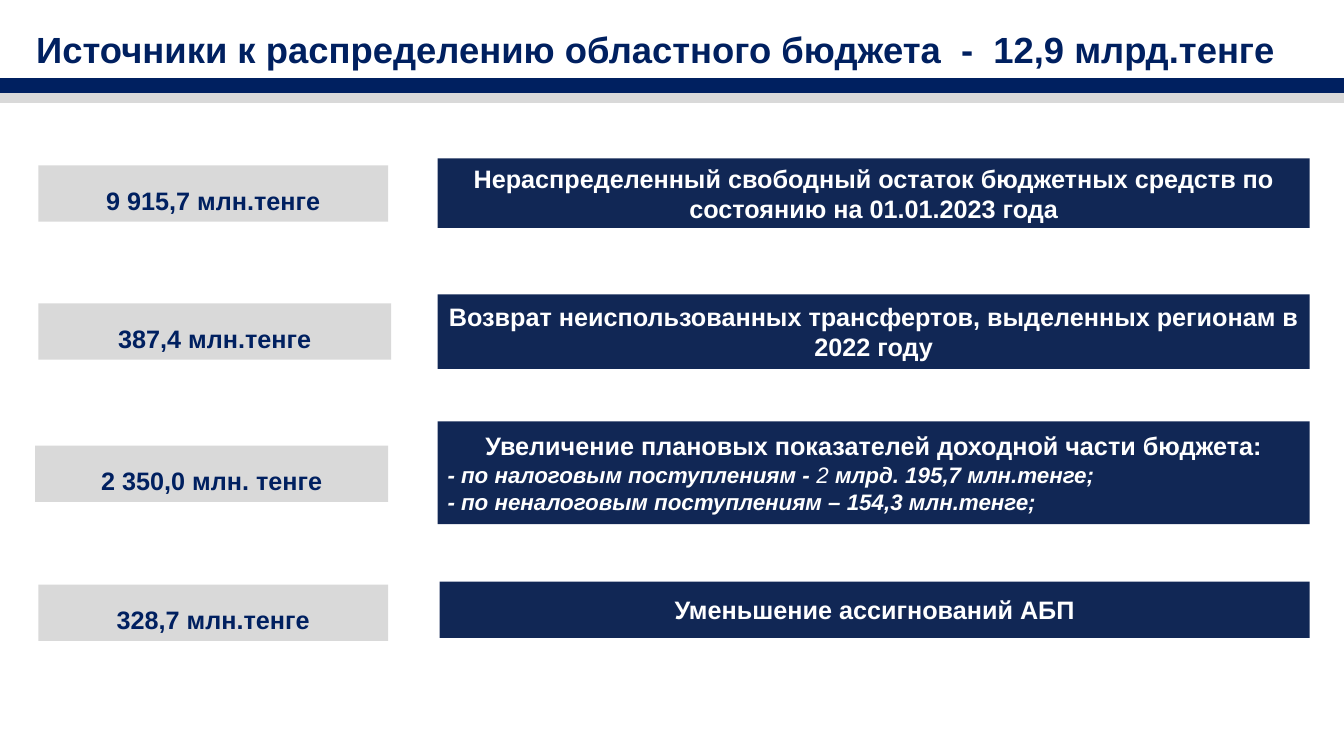
import pptx
import pptx.util
import pptx.dml.color
import pptx.enum.shapes
import pptx.enum.text

Inches = pptx.util.Inches
RGBColor = pptx.dml.color.RGBColor
ALIGN = pptx.enum.text.PP_ALIGN
ANCHOR = pptx.enum.text.MSO_ANCHOR

NAVY = RGBColor(0x00, 0x20, 0x60)
DARK = RGBColor(0x11, 0x27, 0x55)
GREY = RGBColor(0xD9, 0xD9, 0xD9)
WHITE = RGBColor(0xFF, 0xFF, 0xFF)

WIDE, HIGH = 13.33, 7.5
LEFT, RIGHT = 0.38, 4.34   # column starts
EDGE = 12.99               # right edge of the source column
SUM_H = 0.56

deck = pptx.Presentation()
deck.slide_width, deck.slide_height = Inches(WIDE), Inches(HIGH)
slide = deck.slides.add_slide(deck.slide_layouts[5])


def write(frame, *lines, size=18, color=WHITE, align=ALIGN.CENTER,
          anchor=ANCHOR.MIDDLE, space=1.0):
    """Write lines into a frame; a list of (text, bold) runs is an italic detail."""
    frame.word_wrap = True
    frame.auto_size = pptx.enum.text.MSO_AUTO_SIZE.NONE
    frame.vertical_anchor = anchor
    for i, line in enumerate(lines):
        para = frame.add_paragraph() if i else frame.paragraphs[0]
        detail = isinstance(line, list)
        para.alignment = ALIGN.LEFT if detail else align
        para.line_spacing = space
        for text, bold in line if detail else [(line, True)]:
            run = para.add_run()
            run.text = text
            font = run.font
            font.name, font.bold, font.italic = "Arial", bold, detail
            font.size = pptx.util.Pt(16 if detail else size)
            font.color.rgb = color


def block(x, y, w, h, fill, edge=False):
    box = slide.shapes.add_shape(pptx.enum.shapes.MSO_SHAPE.RECTANGLE,
                                 Inches(x), Inches(y), Inches(w), Inches(h))
    box.shadow.inherit = False
    box.fill.solid()
    box.fill.fore_color.rgb = fill
    if edge:
        box.line.color.rgb = fill
        box.line.width = pptx.util.Pt(1)
    else:
        box.line.fill.background()
    return box.text_frame


title = slide.shapes.title
title.left, title.top = Inches(-0.09), Inches(0.22)
title.width, title.height = Inches(13.2), Inches(0.54)
write(title.text_frame,
      "Источники к распределению областного бюджета  -  12,9 млрд.тенге",
      size=26, color=NAVY, anchor=ANCHOR.TOP)

# sum, its left, width and top; source left, top and height; source lines
rows = [
    ("9 915,7 млн.тенге", LEFT, 3.47, 1.64, RIGHT, 1.57, 0.69,
     ["Нераспределенный свободный остаток бюджетных средств по состоянию на 01.01.2023 года"]),
    ("387,4 млн.тенге", LEFT, 3.5, 3.01, RIGHT, 2.92, 0.74,
     ["Возврат неиспользованных трансфертов, выделенных регионам в 2022 году"]),
    ("2 350,0 млн. тенге", 0.35, 3.5, 4.42, RIGHT, 4.18, 1.02,
     ["Увеличение плановых показателей доходной части бюджета:",
      [("- по налоговым поступлениям -", True), (" 2 ", False),
       ("млрд. 195,7 млн.тенге;", True)],
      [("- по неналоговым поступлениям – 154,3 млн.тенге;", True)]]),
    ("328,7 млн.тенге", LEFT, 3.47, 5.8, 4.36, 5.77, SUM_H,
     ["Уменьшение ассигнований АБП"]),
]
for total, x, w, y, left, top, h, lines in rows:
    write(block(x, y, w, SUM_H, GREY), total,
          color=NAVY, anchor=ANCHOR.TOP, space=1.5)
    write(block(left, top, EDGE - left, h, DARK), *lines)

for y, h, fill in [(0.78, 0.14, NAVY), (0.93, 0.09, GREY)]:
    block(0, y, WIDE, h, fill, edge=True)

deck.save("out.pptx")
